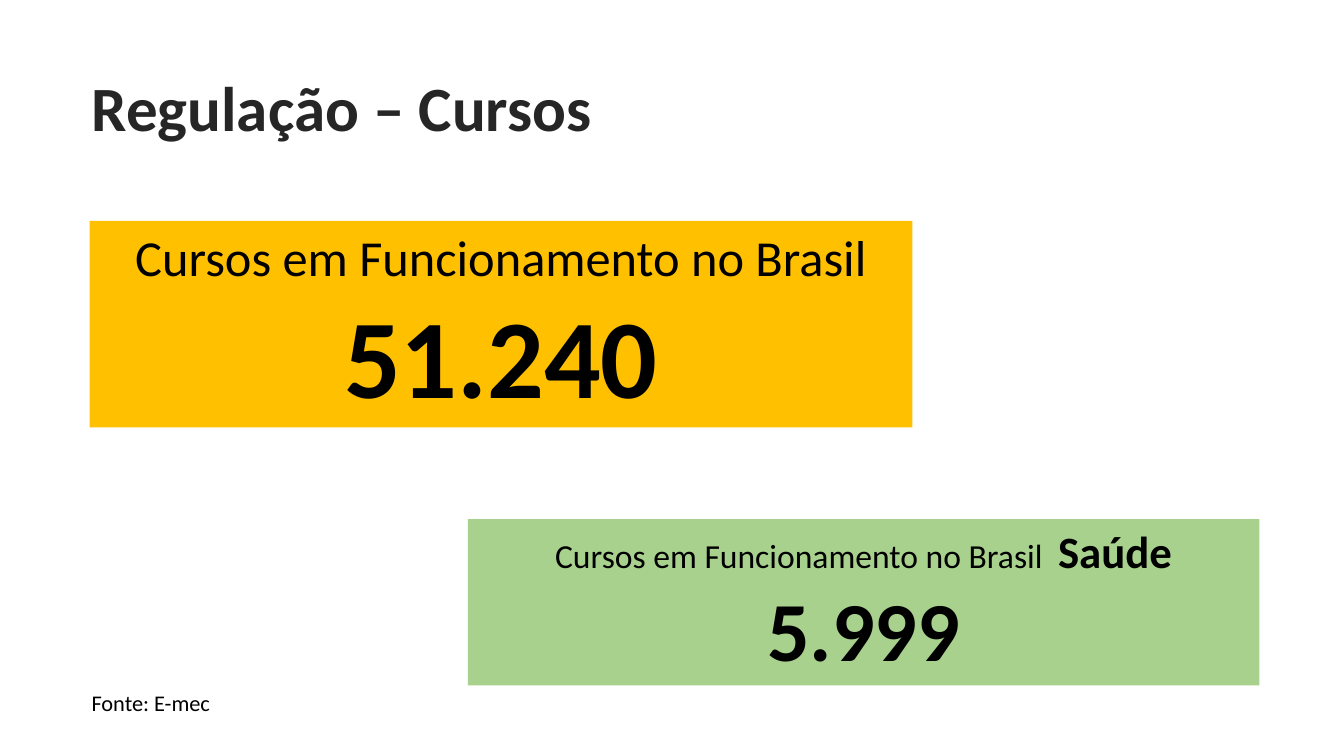
from pptx import Presentation
from pptx.dml.color import RGBColor
from pptx.enum.shapes import MSO_SHAPE as Kind
from pptx.enum.text import MSO_ANCHOR as Anchor, PP_ALIGN as Align
from pptx.util import Inches, Pt


def paint(hue):
    return RGBColor.from_string(hue)


def write(para, parts, hue="000000"):
    for text, size, bold in parts:
        run = para.add_run()
        run.text = text
        font = run.font
        font.name = "Calibri"
        font.size = Pt(size)
        font.bold = bold
        font.color.rgb = paint(hue)


deck = Presentation()
deck.slide_width = Inches(13.33)
deck.slide_height = Inches(7.5)
slide = deck.slides.add_slide(deck.slide_layouts[6])
shapes = slide.shapes

title = shapes.add_textbox(Inches(0.81), Inches(0.51), Inches(9.21), Inches(1.19))
frame = title.text_frame
frame.word_wrap = True
frame.vertical_anchor = Anchor.MIDDLE
frame.paragraphs[0].line_spacing = 0.9
write(frame.paragraphs[0], [("Regulação – Cursos", 45, True)], "262626")

source = shapes.add_textbox(Inches(0.81), Inches(6.79), Inches(1.4), Inches(0.37))
source.text_frame.word_wrap = False
write(source.text_frame.paragraphs[0], [("Fonte: E-mec", 16, False)])

label = "Cursos em Funcionamento no Brasil"
cards = [
    ((0.89, 2.19, 8.16, 2.05), "FFC000",
     [[(label, 36, False)], [("51.240", 80, True)]]),
    ((4.64, 5.15, 7.85, 1.65), "A9D18E",
     [[(label + "  ", 24, False), ("Saúde", 32, True)], [("5.999", 60, True)]]),
]
for place, hue, lines in cards:
    card = shapes.add_shape(Kind.RECTANGLE, *[Inches(n) for n in place])
    card.shadow.inherit = False
    card.fill.solid()
    card.fill.fore_color.rgb = paint(hue)
    card.line.fill.background()
    frame = card.text_frame
    frame.word_wrap = True
    frame.vertical_anchor = Anchor.TOP
    frame.add_paragraph()
    for para, parts in zip(frame.paragraphs, lines):
        para.alignment = Align.CENTER
        write(para, parts)

deck.save("out.pptx")
